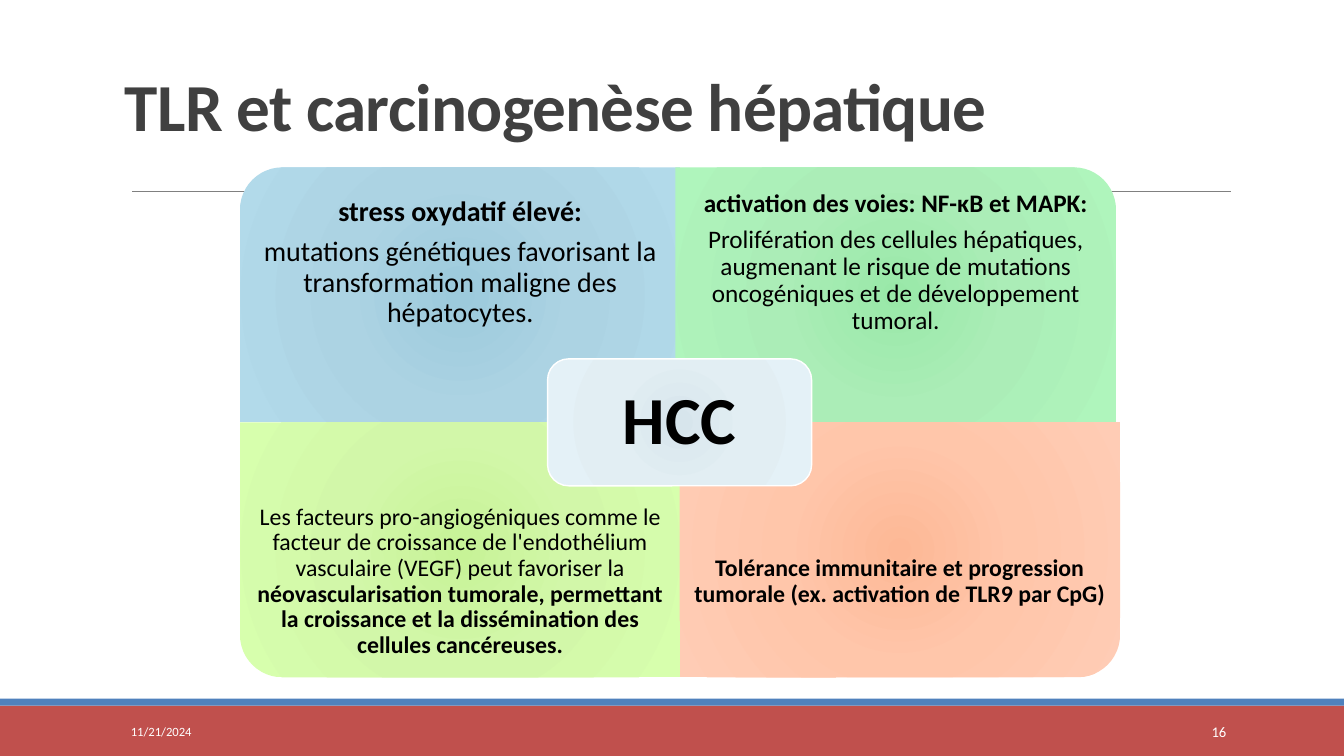
from dataclasses import dataclass

from lxml import etree
from pptx import Presentation, util as u
from pptx.dml.color import RGBColor
from pptx.enum import shapes as s, text as t
from pptx.oxml import ns

WIDTH, HEIGHT = u.Inches(13.33), u.Inches(7.5)


@dataclass(frozen=True)
class Theme:
    font: str = "Calibri"
    heading: str = "404040"
    ink: str = "000000"
    white: str = "FFFFFF"
    rule: str = "808080"
    footer: str = "C0504D"
    accent: str = "4F81BD"
    blue: tuple = ("9CCADC", "ACD3E3", "B2DAEA")
    mint: tuple = ("99E8A8", "ABEDB7", "AFF5BC")
    lime: tuple = ("C7F397", "D2F7A9", "D7FFAD")
    peach: tuple = ("FDB896", "FFC6AA", "FFCCB5")
    pale: tuple = ("D7E5EC", "E2EEF3", "E4F1F7")
    display_size: float = 48
    large_size: float = 20
    medium_size: float = 18
    body_size: float = 17
    number_size: float = 10.5
    date_size: float = 9


THEME = Theme()

# Diagram grid, in percent of the slide's width and height
LEFT, TOP = 17.85, 22.13
COLUMN, ROW = 32.78, 33.73
TEXT_ROW = ROW * 0.75


def place(box):
    """Turn left, top, width, height in percent into slide lengths."""
    left, top, width, height = box
    return [round(share * side / 100) for share, side in
            ((left, WIDTH), (top, HEIGHT), (width, WIDTH), (height, HEIGHT))]


def radial_fill(shape, colours):
    properties = shape._element.spPr
    gradient = etree.Element(ns.qn("a:gradFill"), rotWithShape="1")
    stops = etree.SubElement(gradient, ns.qn("a:gsLst"))
    for position, colour in zip((0, 45000, 100000), colours):
        stop = etree.SubElement(stops, ns.qn("a:gs"), pos=str(position))
        etree.SubElement(stop, ns.qn("a:srgbClr"), val=colour)
    circle = etree.SubElement(gradient, ns.qn("a:path"), path="circle")
    etree.SubElement(circle, ns.qn("a:fillToRect"),
                     {side: "100000" for side in "ltrb"})
    properties.find(ns.qn("a:prstGeom")).addnext(gradient)


def add_panel(slide, kind, box, fill, line=None, rotation=0):
    """Add a shape; a quarter turn keeps the visible box."""
    left, top, width, height = place(box)
    if rotation % 180:
        left, top = left + (width - height) // 2, top + (height - width) // 2
        width, height = height, width
    shape = slide.shapes.add_shape(kind, left, top, width, height)
    shape.shadow.inherit = False
    shape.rotation = rotation
    if isinstance(fill, tuple):
        radial_fill(shape, fill)
    else:
        shape.fill.solid()
        shape.fill.fore_color.rgb = RGBColor.from_string(fill)
    if line:
        shape.line.color.rgb = RGBColor.from_string(line)
        shape.line.width = u.Pt(1)
    else:
        shape.line.fill.background()


def add_rule(slide, start, end, row):
    left, top, width, _ = place((start, row, end - start, 0))
    rule = slide.shapes.add_connector(s.MSO_CONNECTOR.STRAIGHT,
                                      left, top, left + width, top)
    rule.line.color.rgb = RGBColor.from_string(THEME.rule)
    rule.line.width = u.Pt(0.5)
    etree.SubElement(rule._element.spPr, ns.qn("a:effectLst"))


def add_text(slide, box, paragraphs, size, colour=THEME.ink, inset=None,
             align=t.PP_ALIGN.CENTER, anchor=t.MSO_ANCHOR.MIDDLE,
             line_spacing=0.9, tracking=None):
    """Each paragraph is a list of (words, bold) runs."""
    frame = slide.shapes.add_textbox(*place(box)).text_frame
    frame.word_wrap = True
    frame.vertical_anchor = anchor
    if inset is not None:
        frame.margin_left = frame.margin_right = u.Pt(inset)
        frame.margin_top = frame.margin_bottom = u.Pt(inset)
    for index, runs in enumerate(paragraphs):
        paragraph = frame.add_paragraph() if index else frame.paragraphs[0]
        paragraph.alignment = align
        paragraph.line_spacing = line_spacing
        if index < len(paragraphs) - 1:
            paragraph.space_after = u.Pt(size * 0.35)
        for words, bold in runs:
            run = paragraph.add_run()
            run.text = words
            run.font.name = THEME.font
            run.font.size = u.Pt(size)
            run.font.bold = bold
            run.font.color.rgb = RGBColor.from_string(colour)
            if tracking:
                run.font._element.set("spc", str(round(tracking * 100)))


def add_quadrant(slide, left, row, rotation, fill, paragraphs, size):
    top = TOP + row * ROW
    add_panel(slide, s.MSO_SHAPE.ROUND_1_RECTANGLE, (left, top, COLUMN, ROW),
              fill, rotation=rotation)
    text_top = top + row * (ROW - TEXT_ROW)
    add_text(slide, (left, text_top, COLUMN, TEXT_ROW), paragraphs, size,
             inset=size * 0.56)


def main():
    presentation = Presentation()
    presentation.slide_width, presentation.slide_height = WIDTH, HEIGHT
    slide = presentation.slides.add_slide(presentation.slide_layouts[6])

    # Footer bands and title rule
    add_panel(slide, s.MSO_SHAPE.RECTANGLE, (0, 93.33, 100, 6.67), THEME.footer)
    add_panel(slide, s.MSO_SHAPE.RECTANGLE, (0, 92.4, 100, 0.93), THEME.accent)
    add_rule(slide, 9.83, 91.6, 25.33)

    # Title, date and slide number
    add_text(slide, (8.55, -1.33, 82.52, 21.2),
             [[("TLR et carcinogenèse hépatique", True)]],
             THEME.display_size, THEME.heading, align=t.PP_ALIGN.LEFT,
             anchor=t.MSO_ANCHOR.BOTTOM, line_spacing=0.85, tracking=-0.5)
    for left, width, words, size, align in (
            (9, 20.26, "11/21/2024", THEME.date_size, t.PP_ALIGN.LEFT),
            (81.25, 10.73, "16", THEME.number_size, t.PP_ALIGN.RIGHT)):
        add_text(slide, (left, 94.13, width, 5.33), [[(words, False)]], size,
                 THEME.white, align=align, line_spacing=1)

    # Four mechanisms around the centre
    quadrants = (
        (LEFT, 0, 270, THEME.blue,
         [[("stress oxydatif élevé:", True)],
          [("mutations génétiques favorisant la transformation maligne des "
            "hépatocytes.", False)]], THEME.large_size),
        (50.26, 0, 0, THEME.mint,
         [[("activation des voies: NF-κB et MAPK:", True)],
          [("Prolifération des cellules hépatiques, augmenant le risque de "
            "mutations oncogéniques et de développement tumoral.", False)]],
         THEME.medium_size),
        (LEFT, 1, 180, THEME.lime,
         [[("Les facteurs pro-angiogéniques comme le facteur de croissance de "
            "l'endothélium vasculaire (VEGF) peut favoriser la ", False),
           ("néovascularisation tumorale, permettant la croissance et la "
            "dissémination des cellules cancéreuses.", True)]],
         THEME.body_size),
        (50.56, 1, 90, THEME.peach,
         [[("Tolérance immunitaire et progression tumorale (ex. activation "
            "de TLR9 par CpG)", True)]], THEME.body_size),
    )
    for quadrant in quadrants:
        add_quadrant(slide, *quadrant)

    # Centre
    centre = (40.74, 47.47, 19.65, 16.8)
    add_panel(slide, s.MSO_SHAPE.ROUNDED_RECTANGLE, centre, THEME.pale,
              line=THEME.white)
    add_text(slide, centre, [[("HCC", True)]], THEME.display_size, inset=14.4)

    presentation.save("out.pptx")


if __name__ == "__main__":
    main()
